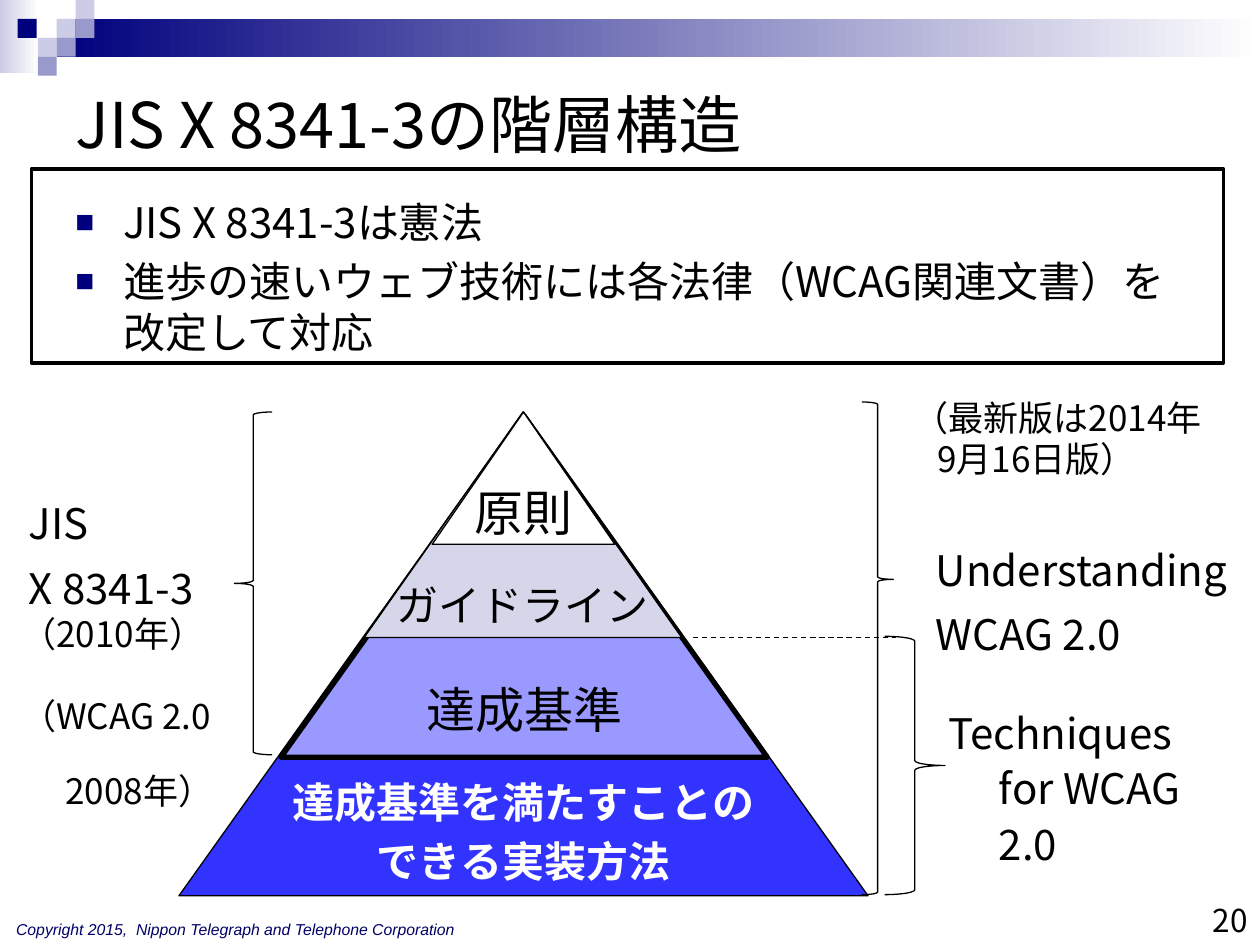
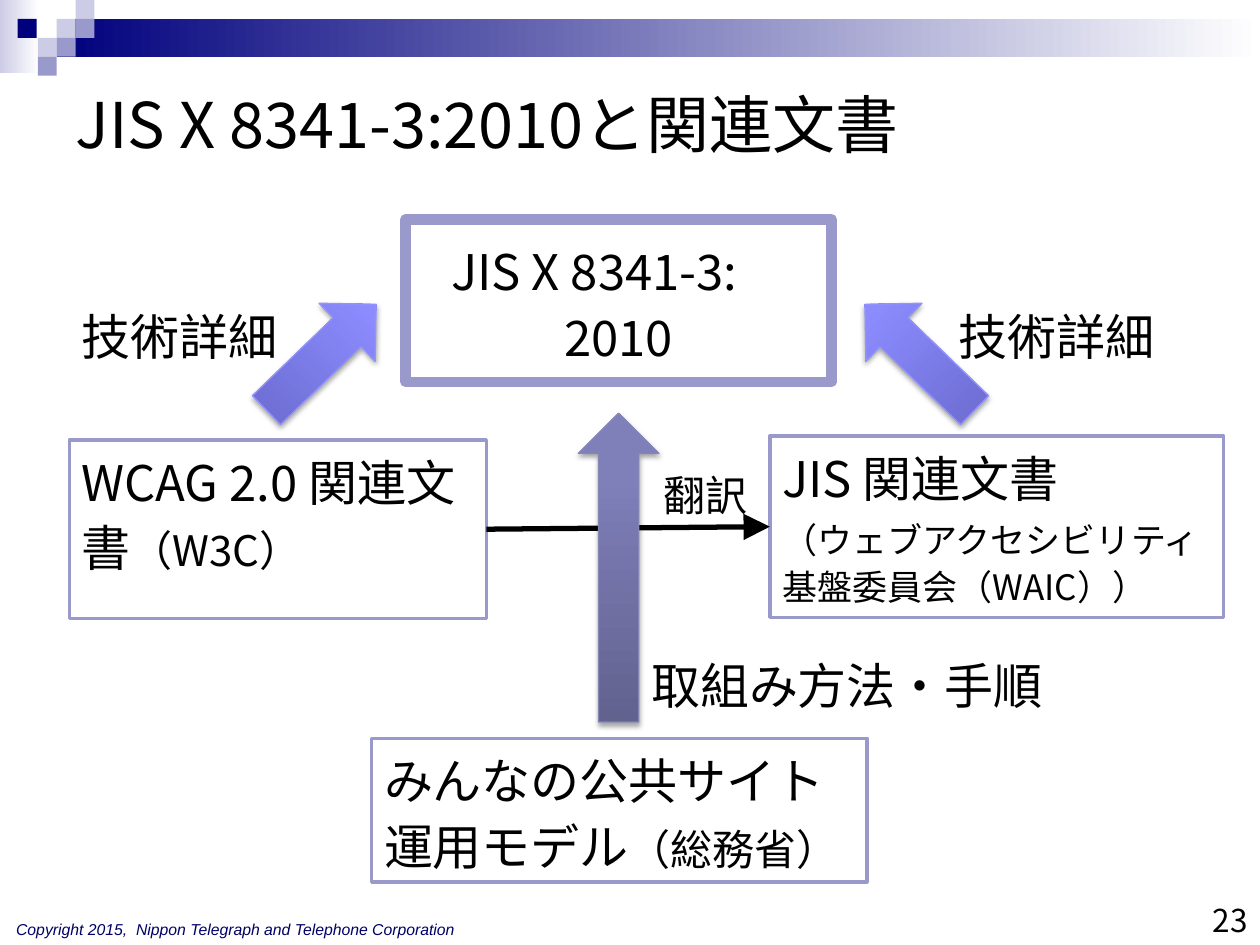
"""Build two slides on the layers of JIS X 8341-3 and its related documents."""
from lxml import etree
from pptx import Presentation
from pptx.dml.color import RGBColor
from pptx.enum.shapes import MSO_CONNECTOR, MSO_SHAPE
from pptx.enum.dml import MSO_LINE
from pptx.enum.text import MSO_ANCHOR, MSO_AUTO_SIZE, PP_ALIGN
from pptx.oxml.ns import qn
from pptx.util import Inches, Pt

RECT, TRI = MSO_SHAPE.RECTANGLE, MSO_SHAPE.ISOSCELES_TRIANGLE
BRACE, ARROW = MSO_SHAPE.LEFT_BRACE, MSO_SHAPE.UP_ARROW
LINE, DASH = MSO_CONNECTOR.STRAIGHT, MSO_LINE.DASH
TOP, MID, LOW = MSO_ANCHOR.TOP, MSO_ANCHOR.MIDDLE, MSO_ANCHOR.BOTTOM
LEFT, MIDST, RIGHT = PP_ALIGN.LEFT, PP_ALIGN.CENTER, PP_ALIGN.RIGHT
GROW = MSO_AUTO_SIZE.SHAPE_TO_FIT_TEXT
GOTHIC, SANS = "Noto Sans CJK JP", "Arial"
PITCH = 1.21
INK = {
    "black": "000000", "white": "FFFFFF", "navy": "00007D", "foot": "000066",
    "pale": "CCCCE6", "mid": "9999CC", "deep": "3333FF", "lilac": "9999FF",
    "mist": "D6D6EB", "blue1": "6767CA", "blue2": "8C8CFF", "blue3": "9393FC",
    "grey1": "62628F", "grey2": "7F7FBA", "grey3": "8686B6",
}
HUE = {name: RGBColor.from_string(code) for name, code in INK.items()}

deck = Presentation()
deck.slide_width, deck.slide_height = Inches(10), Inches(7.5)
COL, ROW = deck.slide_width / 100, deck.slide_height / 75


def put(slide, kind, box, fill=None, line=None, width=0.75, turn=0, end=1):
    """Place a shape, or a text box if kind is None, on the grid."""
    x, y, w, h = (round(n * unit) for n, unit in zip(box, (COL, ROW, COL, ROW)))
    if kind is None:
        return slide.shapes.add_textbox(x, y, w, h)
    shape = slide.shapes.add_shape(kind, x, y, w, h)
    shape.shadow.inherit = False
    if fill is None:
        shape.fill.background()
    elif isinstance(fill, tuple):
        shape.fill.gradient()
        shape.fill.gradient_angle = turn
        for stop, hue, spot in zip(shape.fill.gradient_stops, fill, (0, end)):
            stop.color.rgb, stop.position = HUE[hue], spot
    else:
        shape.fill.solid()
        shape.fill.fore_color.rgb = HUE[fill]
    if line:
        shape.line.color.rgb, shape.line.width = HUE[line], Pt(width)
    else:
        shape.line.fill.background()
    return shape


def write(shape, rows, size, small=None, hue="black", face=GOTHIC, lead=1.0, gap=0.2,
          align=LEFT, anchor=TOP, wrap=True, low=0.05, bold=False, slant=False):
    """Fill a shape with paragraphs; what follows a bar takes the small size."""
    frame = shape.text_frame
    frame.word_wrap, frame.vertical_anchor = wrap, anchor
    frame.margin_bottom = Inches(low)
    for n, row in enumerate(rows):
        para = frame.add_paragraph() if n else frame.paragraphs[0]
        para.alignment = align
        bits = row.split("|")
        main = size if bits[0] else small
        if face == GOTHIC:
            para.line_spacing = Pt(round(main * PITCH * lead, 1))
        if n:
            para.space_before = Pt(main * gap)
        for k, bit in enumerate(bits):
            if not bit:
                continue
            run = para.add_run()
            run.text = bit
            font = run.font
            font.name, font.size = face, Pt(small if k else size)
            font.bold, font.italic, font.color.rgb = bold, slant, HUE[hue]
            etree.SubElement(font._element, qn("a:ea"), typeface=face)
    return frame


TILES = [(4.5, 1.5, "pale"), (6, 0, "pale"), (6, 1.5, "mid"), (3, 3, "pale"),
         (1.4, 1.5, "navy"), (4.5, 3, "mid"), (3, 4.5, "mid")]
PAGES = [("JIS X 8341-3の階層構造", "20"), ("JIS X 8341-3:2010と関連文書", "23")]
slides = []
for title, page in PAGES:
    slide = deck.slides.add_slide(deck.slide_layouts[6])
    put(slide, RECT, (0, 0, 3.1, 5.8), ("pale", "white"))
    put(slide, RECT, (4.5, 1.5, 95.5, 3), ("navy", "white"))
    for x, y, hue in TILES:
        put(slide, RECT, (x, y, 1.5, 1.5), hue)
    write(put(slide, None, (0.3, 72.5, 40.4, 2.4)),
          ["Copyright 2015,  Nippon Telegraph and Telephone Corporation"],
          9, hue="foot", face=SANS, slant=True)
    write(put(slide, None, (5, 4.6, 89.3, 10.4)), [title], 36, anchor=MID)
    write(put(slide, None, (76.7, 70, 23.3, 5)), [page], 18, align=RIGHT, anchor=LOW)
    slides.append(slide)
tiers, docs = slides

body = write(put(tiers, None, (5, 15.1, 90, 46)),
             ["JIS X 8341-3は憲法",
              "進歩の速いウェブ技術には各法律（WCAG関連文書）を改定して対応"], 24)
for para in body.paragraphs:
    props = para._p.get_or_add_pPr()
    props.set("marL", str(Inches(0.38)))
    props.set("indent", str(-Inches(0.38)))
    tint = etree.SubElement(props, qn("a:buClr"))
    etree.SubElement(tint, qn("a:srgbClr"), val=INK["navy"])
    etree.SubElement(props, qn("a:buSzPct"), val="75000")
    etree.SubElement(props, qn("a:buFont"), typeface=SANS)
    etree.SubElement(props, qn("a:buChar"), char="■")

LAYERS = [
    ((14.2, 32.7, 54.7, 38.4), "deep", 0.75, 24, 0.08,
     ["達成基準を満たすことの", "できる実装方法"]),
    ((22.3, 33, 38.6, 27.1), "lilac", 3, 28, 0.15, ["達成基準"]),
    ((28.9, 32.7, 25.2, 17.9), "mist", 0.75, 24, 0.06, ["ガイドライン"]),
    ((34.3, 32.7, 14.5, 10.5), "white", 0.75, 28, 0.02, ["原則"]),
]
for box, fill, width, size, low, rows in LAYERS:
    base = fill == "deep"
    write(put(tiers, TRI, box, fill, "black", width), rows, size,
          hue="white" if base else "black", bold=base, align=MIDST,
          anchor=LOW, wrap=False, low=low)

tech = write(put(tiers, None, (74.3, 55.2, 25.7, 14.3)),
             ["Techniques　for WCAG 2.0"], 24, lead=1.1)
hang = tech.paragraphs[0]._p.get_or_add_pPr()
hang.set("marL", str(Inches(0.4)))
hang.set("indent", str(-Inches(0.4)))

write(put(tiers, None, (1.3, 38.6, 29, 10.7)), ["JIS", "X 8341-3"], 24, lead=1.1)
write(put(tiers, RECT, (73.3, 42.3, 25.9, 10.7), "white"),
      ["Understanding", "WCAG 2.0"], 24, lead=1.1)

BRACES = [((18.6, 32.7, 3, 27.2), 0, 0.5), ((70.2, 50.5, 4.8, 20.5), 180, 0.5),
          ((68.4, 31.9, 2.5, 39.1), 180, 0.64)]
for box, spin, tip in BRACES:
    brace = put(tiers, BRACE, box, line="black")
    brace.rotation = spin
    brace.adjustments[0], brace.adjustments[1] = 0.08, tip

NOTES = [((0.7, 48.8, 20.8, 3.7), ["（2010年）"], 0.2, 0),
         ((71.5, 31.6, 28.5, 7.2), ["（最新版は2014年", "9月16日版）"], 0.2, 0.19),
         ((0.7, 55.3, 20.8, 7.1), ["（WCAG 2.0", "2008年）"], 1.15, 0.35)]
for box, rows, gap, dent in NOTES:
    note = write(put(tiers, None, box), rows, 20, lead=0.8, gap=gap)
    for para in note.paragraphs[1:]:
        para._p.get_or_add_pPr().set("marL", str(Inches(dent)))
put(tiers, RECT, (2.5, 13.4, 94.6, 15.4), line="black", width=2)

write(put(docs, RECT, (32.2, 17.4, 33.8, 12.9), "white", "mid", 6),
      ["JIS X 8341-3:　2010"], 28, lead=1.1, align=MIDST, anchor=MID)
BOXES = [
    ((61.1, 34.6, 36, 14.4),
     ["JIS 関連文書", "|（ウェブアクセシビリティ基盤委員会（WAIC））"], 20),
    ((29.5, 58.6, 39.3, 11.4), ["みんなの公共サイト運用モデル|（総務省）"], 24),
    ((5.5, 34.9, 33.1, 14.2), ["WCAG 2.0 関連文書|（W3C）"], 24),
]
for box, rows, small in BOXES:
    write(put(docs, RECT, box, "white", "mid", 2), rows, 28, small, lead=1.1)

LINKS = [(tiers, 55, 50.6, 71.1, 50.6, 0.75), (docs, 38.6, 42, 61.1, 41.8, 3)]
for slide, x1, y1, x2, y2, width in LINKS:
    link = slide.shapes.add_connector(
        LINE, round(x1 * COL), round(y1 * ROW), round(x2 * COL), round(y2 * ROW))
    link.line.color.rgb, link.line.width = HUE["black"], Pt(width)
    if slide is tiers:
        link.line.dash_style = DASH
    else:
        etree.SubElement(link.line._get_or_add_ln(), qn("a:tailEnd"),
                         type="triangle", w="lg", len="lg")
    etree.SubElement(link._element.spPr, qn("a:effectLst"))

ARROWS = [((22.3, 22.3, 6.4, 12.1), 46, "blue"), ((69.8, 22.3, 6.4, 12.1), 314, "blue"),
          ((45.9, 32.8, 6.4, 24.5), 0, "grey")]
for box, spin, tone in ARROWS:
    arrow = put(docs, ARROW, box, (tone + "1", tone + "2"), tone + "3", turn=90, end=0.8)
    arrow.rotation = spin
    glow = etree.SubElement(
        arrow._element.spPr.find(qn("a:effectLst")), qn("a:outerShdw"),
        blurRad=str(Pt(3.1)), dist=str(Pt(1.8)), dir="5400000", rotWithShape="0")
    shade = etree.SubElement(glow, qn("a:srgbClr"), val=INK["black"])
    etree.SubElement(shade, qn("a:alpha"), val="35000")

LABELS = [((75.1, 23.8, 17.7, 5.7), "技術詳細", 28), ((5.5, 23.8, 17.7, 5.7), "技術詳細", 28),
          ((50.7, 51.5, 34, 5.7), "取組み方法・手順", 28), ((51.7, 36.8, 8.8, 5), "翻訳", 24)]
for box, label, size in LABELS:
    frame = write(put(docs, None, box), [label], size, face=SANS, wrap=False)
    frame.auto_size = GROW

deck.save("out.pptx")
